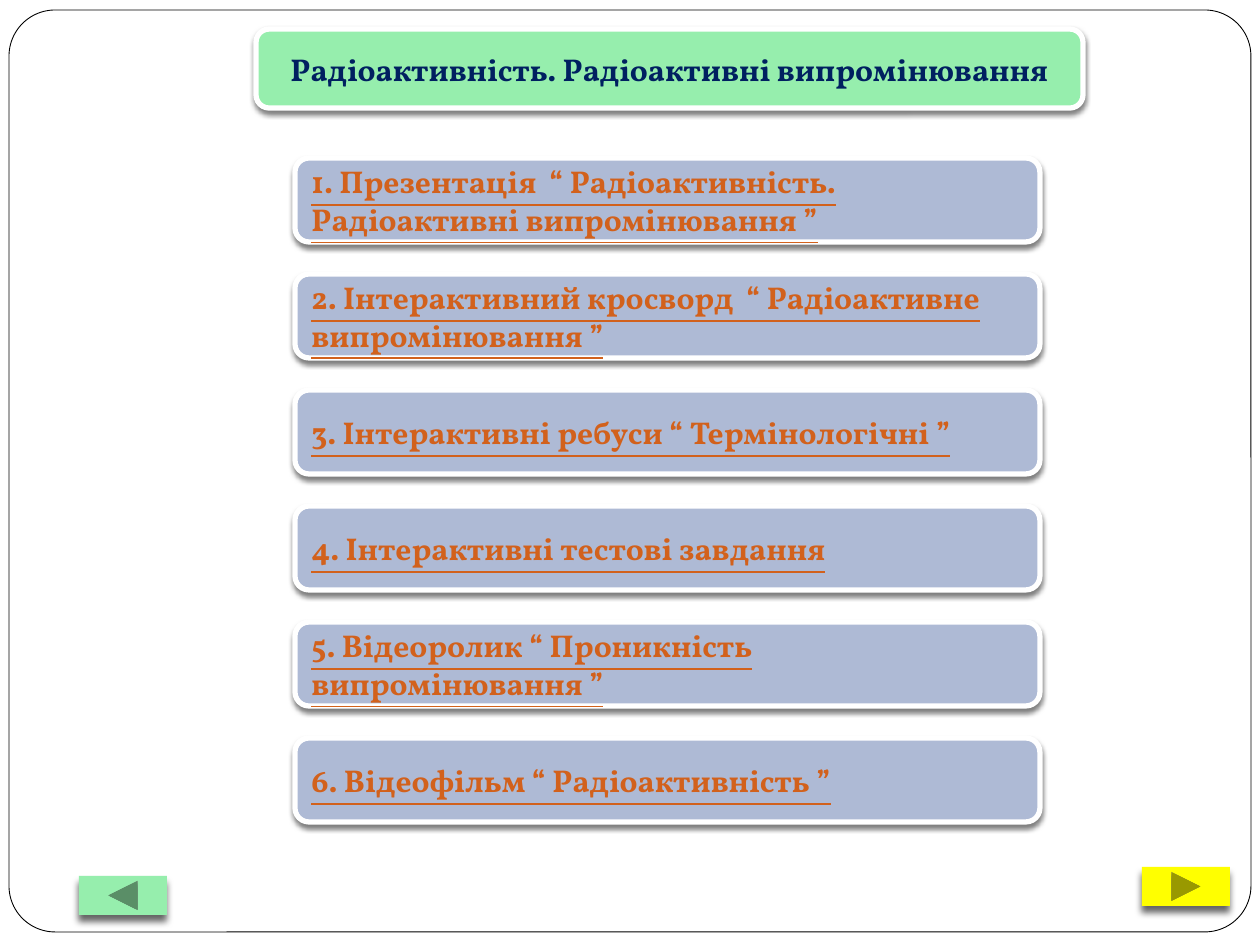
"""Build a menu slide on radioactivity with six topics and two navigation buttons."""
from lxml.etree import SubElement
from pptx import Presentation
from pptx.dml.color import RGBColor
from pptx.enum.shapes import MSO_SHAPE
from pptx.enum.text import MSO_ANCHOR, PP_ALIGN
from pptx.oxml.ns import qn
from pptx.util import Pt

PX = 914400 / 126
WHITE = RGBColor(0xFF, 0xFF, 0xFF)
BLACK = RGBColor(0x00, 0x00, 0x00)
GREEN = RGBColor(0x96, 0xEE, 0xAD)
YELLOW = RGBColor(0xFF, 0xFF, 0x00)
LAVENDER = RGBColor(0xAE, 0xBA, 0xD5)
NAVY = RGBColor(0x00, 0x20, 0x60)
ORANGE = RGBColor(0xD2, 0x61, 0x1C)

presentation = Presentation()
presentation.slide_width = round(1260 * PX)
presentation.slide_height = round(945 * PX)
slide = presentation.slides.add_slide(presentation.slide_layouts[6])


def add_box(kind, bounds, fill, line=None, line_width=0, shadow=None):
    shape = slide.shapes.add_shape(kind, *(round(value * PX) for value in bounds))
    shape.fill.solid()
    shape.fill.fore_color.rgb = fill
    if line is None:
        shape.line.fill.background()
    else:
        shape.line.color.rgb = line
        shape.line.width = Pt(line_width)
    shape.shadow.inherit = False
    if shadow:
        opacity, blur, distance = shadow
        effects = shape.element.spPr.find(qn("a:effectLst"))
        outer = SubElement(effects, qn("a:outerShdw"), blurRad=str(Pt(blur)),
                           dist=str(Pt(distance)), dir="5400000", rotWithShape="0")
        color = SubElement(outer, qn("a:srgbClr"), val=str(BLACK))
        SubElement(color, qn("a:alpha"), val=str(opacity * 1000))
    return shape


def write_text(shape, text, color, align=PP_ALIGN.LEFT, underline=False):
    frame = shape.text_frame
    frame.word_wrap = True
    frame.vertical_anchor = MSO_ANCHOR.MIDDLE
    paragraph = frame.paragraphs[0]
    paragraph.alignment = align
    run = paragraph.add_run()
    run.text = text
    run.font.name = "Vollkorn"
    run.font.size = Pt(18)
    run.font.bold = True
    run.font.underline = underline
    run.font.color.rgb = color


border = add_box(MSO_SHAPE.ROUNDED_RECTANGLE, (9, 10, 1242, 922), WHITE, BLACK, 0.5)
border.adjustments[0] = 0.05

PANEL = MSO_SHAPE.FLOWCHART_ALTERNATE_PROCESS
PANEL_SHADOW = (50, 3, 2)
title = add_box(PANEL, (256, 29, 827, 79), GREEN, WHITE, 3, PANEL_SHADOW)
write_text(title, "Радіоактивність. Радіоактивні випромінювання", NAVY, align=PP_ALIGN.CENTER)

topics = [
    "1. Презентація  “ Радіоактивність. Радіоактивні випромінювання ”",
    "2. Інтерактивний кросворд  “ Радіоактивне випромінювання ”",
    "3. Інтерактивні ребуси “ Термінологічні ”",
    "4. Інтерактивні тестові завдання",
    "5. Відеоролик “ Проникність випромінювання ”",
    "6. Відеофільм “ Радіоактивність ”",
]
for index, topic in enumerate(topics):
    panel = add_box(PANEL, (295, 158 + 116 * index, 745, 84), LAVENDER, WHITE, 3, PANEL_SHADOW)
    write_text(panel, topic, ORANGE, underline=True)

for kind, left, top, fill in [
    (MSO_SHAPE.ACTION_BUTTON_FORWARD_OR_NEXT, 1142, 867, YELLOW),
    (MSO_SHAPE.ACTION_BUTTON_BACK_OR_PREVIOUS, 79, 876, GREEN),
]:
    add_box(kind, (left, top, 88, 39), fill, shadow=(60, 4, 4))

presentation.save("out.pptx")
